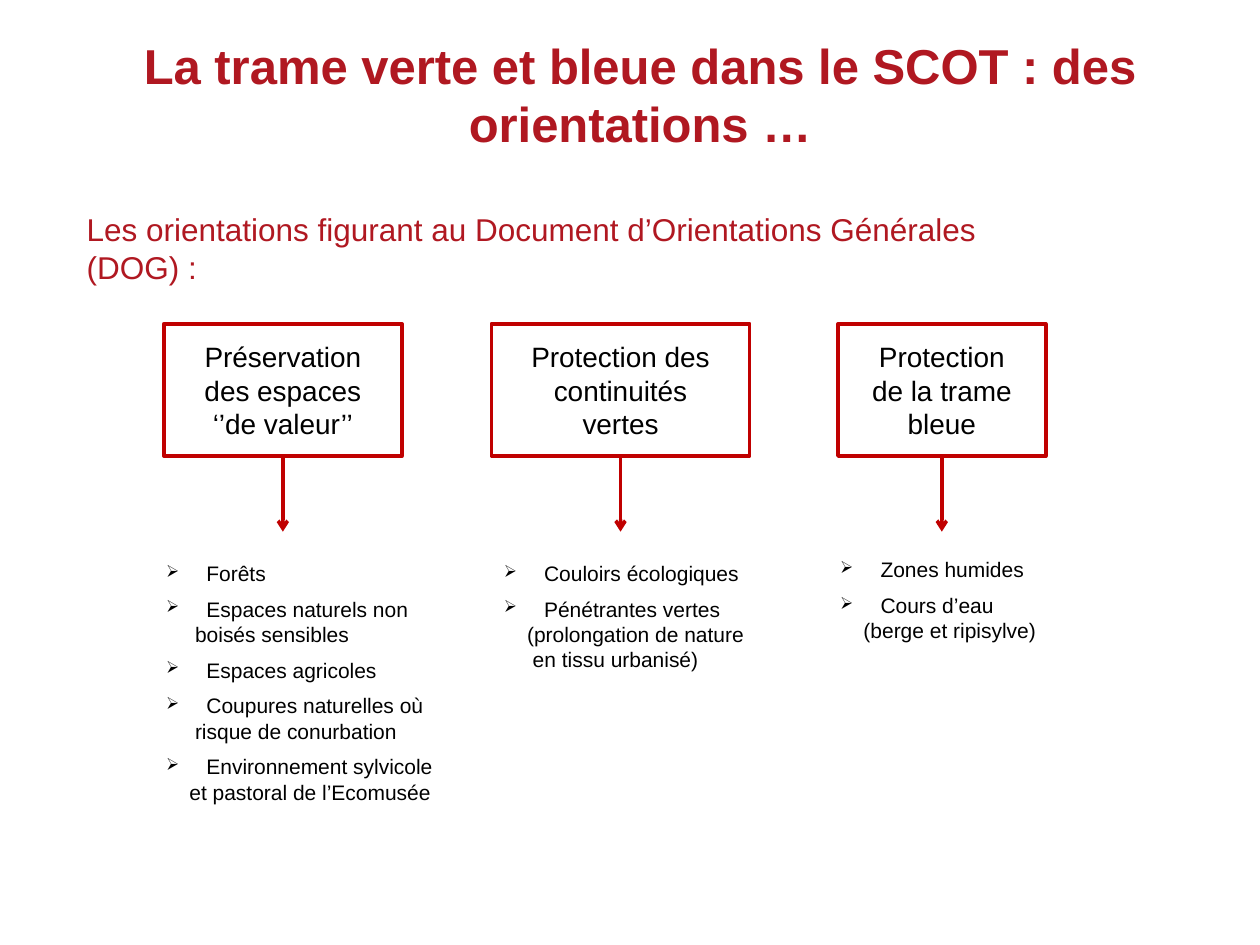
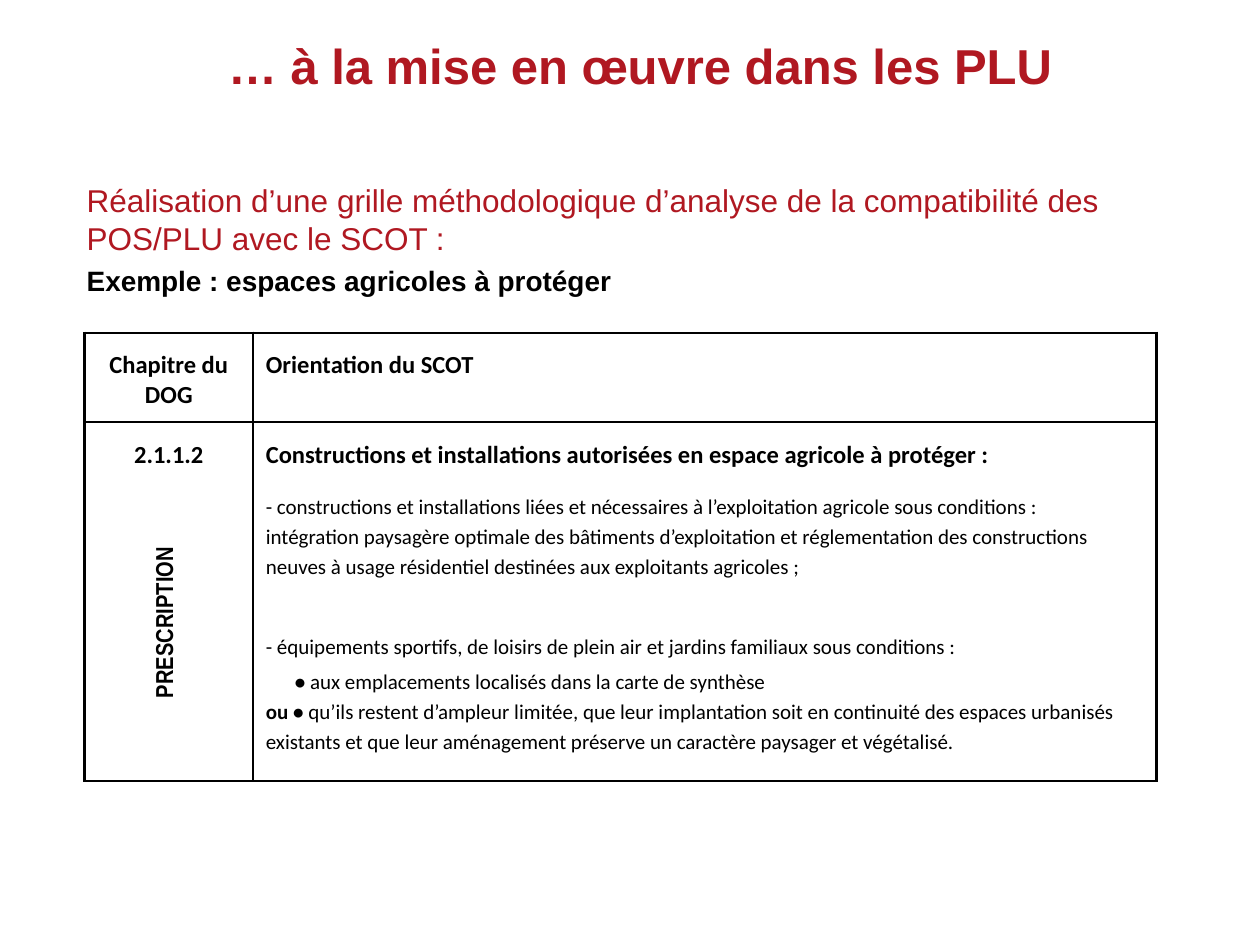
from lxml.etree import SubElement
from pptx import Presentation
from pptx.dml.color import RGBColor
from pptx.enum.shapes import MSO_CONNECTOR, MSO_SHAPE
from pptx.enum.text import PP_ALIGN
from pptx.oxml.ns import qn
from pptx.util import Inches, Pt

RED, LINE, BLACK = "B01821", "C00000", "000000"
LEFT, MID = PP_ALIGN.LEFT, PP_ALIGN.CENTER

deck = Presentation()
deck.slide_width, deck.slide_height = Inches(10), Inches(7.5)
# Grid of 100 columns by 75 rows
col, row = deck.slide_width / 100, deck.slide_height / 75
goals, plans = [deck.slides.add_slide(deck.slide_layouts[6]) for _ in range(2)]


def hue(code):
    return RGBColor.from_string(code)


def ink(para, size, tint=BLACK, bold=False, face="Arial", align=LEFT):
    para.alignment = align
    for run in para.runs:
        run.font.size, run.font.name, run.font.bold = Pt(size), face, bold
        run.font.color.rgb = hue(tint)


# Tables of the second slide: one per column, a head above a body
items = [
    # bold text, plain text, size, space after, indent in columns
    ("Constructions et installations autorisées en espace agricole à protéger :", "", 14, 12, 0),
    ("", "- constructions et installations liées et nécessaires à l’exploitation agricole"
     " sous conditions :", 12, 0, 0),
    ("", "intégration paysagère optimale des bâtiments d’exploitation et réglementation"
     " des constructions neuves à usage résidentiel destinées aux exploitants agricoles ;",
     12, 29, 0),
    ("", "- équipements sportifs, de loisirs de plein air et jardins familiaux"
     " sous conditions :", 12, 3, 0),
    ("• ", "aux emplacements localisés dans la carte de synthèse", 12, 0, 2.3),
    ("ou • ", "qu’ils restent d’ampleur limitée, que leur implantation soit en continuité"
     " des espaces urbanisés existants et que leur aménagement préserve un caractère"
     " paysager et végétalisé.", 12, 0, 0),
]
grids = [
    (6.7, 13.4, MID, [("Chapitre du DOG", "", 14, 0, 0)], [("2.1.1.2", "", 14, 0, 0)]),
    (20.1, 71.7, LEFT, [("Orientation du SCOT", "", 14, 6, 0)], items),
]
for x, wide, align, head, body in grids:
    grid = plans.shapes.add_table(2, 1, int(x * col), int(26.4 * row),
                                  int(wide * col), int(35.6 * row)).table
    grid.first_row = grid.horz_banding = False
    for pos, (tall, texts) in enumerate([(7.1, head), (28.5, body)]):
        grid.rows[pos].height = int(tall * row)
        cell = grid.cell(pos, 0)
        cell.margin_top = int(1.4 * row)
        for num, (bold, plain, size, after, dent) in enumerate(texts):
            frame = cell.text_frame
            para = frame.add_paragraph() if num else frame.paragraphs[0]
            for text in filter(None, (bold, plain)):
                para.add_run().text = text
            ink(para, size, face="Calibri", align=align)
            para.runs[0].font.bold = bool(bold)
            para.space_after = Pt(after)
            if size == 12:
                para.line_spacing = Pt(17)
            para._p.get_or_add_pPr().set("marL", str(int(dent * col)))
        # Black border on every side, no fill
        prop = cell._tc.get_or_add_tcPr()
        for side in ("a:lnL", "a:lnR", "a:lnT", "a:lnB"):
            edge = SubElement(prop, qn(side), w=str(Pt(1.5)))
            SubElement(SubElement(edge, qn("a:solidFill")), qn("a:srgbClr"), val=BLACK)
        cell.fill.background()

# Titles, subtitles and the upright label
notes = [
    (goals, 0.8, 2.3, 100, 10, "La trame verte et bleue dans le SCOT : des orientations …",
     28, RED, True, MID, "Arial"),
    (goals, 5.9, 16.2, 78, 7, "Les orientations figurant au Document d’Orientations Générales (DOG) :",
     18, RED, False, LEFT, "Arial"),
    (plans, 0.8, 2.3, 100, 5.7, "… à la mise en œuvre dans les PLU",
     28, RED, True, MID, "Arial"),
    (plans, 5.9, 13.9, 89, 7, "Réalisation d’une grille méthodologique d’analyse de la "
     "compatibilité des POS/PLU avec le SCOT :", 18, RED, False, LEFT, "Arial"),
    (plans, 5.9, 20.4, 65.4, 3.7, "Exemple : espaces agricoles à protéger",
     16, BLACK, True, LEFT, "Arial"),
    (plans, 11.3, 41.4, 4.4, 15, "PRESCRIPTION", 14, BLACK, True, LEFT, "Arial Narrow"),
]
for slide, x, y, wide, tall, text, size, tint, bold, align, face in notes:
    frame = slide.shapes.add_textbox(int(x * col), int(y * row),
                                     int(wide * col), int(tall * row)).text_frame
    frame.word_wrap = True
    frame.text = text
    ink(frame.paragraphs[0], size, tint, bold, face, align)
    if tall > wide:
        frame._txBody.bodyPr.set("vert", "vert270")

# Three themes: red box, arrow, list of points
DENT = 3.2  # bullet lines; smaller indents carry a point on
themes = [
    (13, 18.9, "Préservation des espaces ‘’de valeur’’", 12.2, 44, 24.2, [
        ("Forêts", DENT), ("Espaces naturels non", DENT), ("boisés sensibles", 2.3),
        ("Espaces agricoles", DENT), ("Coupures naturelles où", DENT),
        ("risque de conurbation", 2.3), ("Environnement sylvicole", DENT),
        ("et pastoral de l’Ecomusée", 1.85)]),
    (39, 20.5, "Protection des continuités vertes", 39, 44, 9.9, [
        ("Couloirs écologiques", DENT), ("Pénétrantes vertes", DENT),
        ("(prolongation de nature", 1.85), ("en tissu urbanisé)", 2.3)]),
    (66.5, 16.5, "Protection de la trame bleue", 65.7, 43.7, 7.9, [
        ("Zones humides", DENT), ("Cours d’eau", DENT), ("(berge et ripisylve)", 1.85)]),
]
for x, wide, name, left, top, tall, points in themes:
    box = goals.shapes.add_shape(MSO_SHAPE.RECTANGLE, int(x * col), int(25.7 * row),
                                 int(wide * col), int(10.5 * row))
    box.shadow.inherit = False
    box.fill.background()
    box.line.color.rgb, box.line.width = hue(LINE), Pt(2)
    frame = box.text_frame
    frame.word_wrap = True
    frame.margin_left = frame.margin_right = int(2 * col)
    frame.margin_top = frame.margin_bottom = int(1.2 * row)
    frame.text = name
    ink(frame.paragraphs[0], 16, align=MID)

    mid = int((x + wide / 2) * col)
    arrow = goals.shapes.add_connector(MSO_CONNECTOR.STRAIGHT, mid, int(36.2 * row),
                                       mid, int(42.2 * row))
    arrow.begin_connect(box, 2)
    arrow.line.color.rgb, arrow.line.width = hue(LINE), Pt(2)
    SubElement(arrow.line._get_or_add_ln(), qn("a:tailEnd"), type="arrow")
    SubElement(arrow._element.spPr, qn("a:effectLst"))

    frame = goals.shapes.add_textbox(int(left * col), int(top * row),
                                     int(24.4 * col), int(tall * row)).text_frame
    frame.word_wrap = True
    frame.text = "\n".join(text for text, _ in points)
    nexts = [dent for _, dent in points[1:]] + [DENT]
    for para, (_, dent), coming in zip(frame.paragraphs, points, nexts):
        para.space_after = Pt(6 if coming == DENT else 0)
        prop = para._p.get_or_add_pPr()
        prop.set("marL", str(int(dent * col)))
        if dent == DENT:
            prop.set("indent", str(int(-dent * col)))
            SubElement(prop, qn("a:buSzPct"), val="80000")
            SubElement(prop, qn("a:buChar"), char="➢")
        ink(para, 12)

deck.save("out.pptx")
